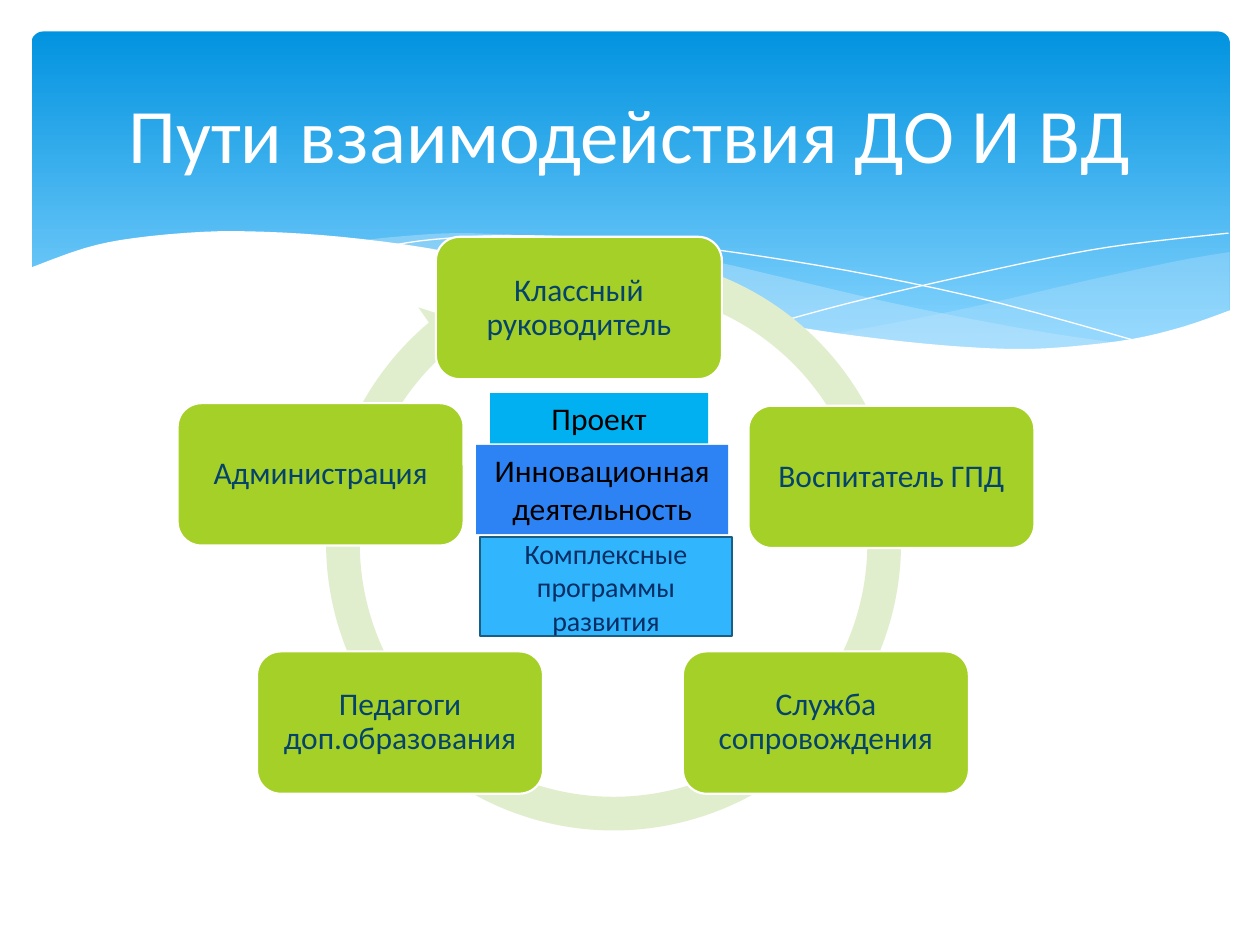
"""Build the slide on how extra classes and after-school work interact."""
from lxml.etree import SubElement
from pptx import Presentation
from pptx.dml.color import RGBColor as RGB
from pptx.enum.shapes import MSO_SHAPE as Kind
from pptx.enum.text import MSO_ANCHOR as Anchor, PP_ALIGN as Align
from pptx.oxml.ns import qn
from pptx.util import Inches, Pt

WHITE = RGB(0xFF, 0xFF, 0xFF)
BLACK = RGB(0, 0, 0)
SKY = RGB(0x02, 0x93, 0xE0)
PALE = RGB(0x83, 0xD3, 0xFE)
MIST = RGB(0xC6, 0xE7, 0xFC)
RING = RGB(0xE1, 0xEE, 0xCD)
LIME = RGB(0xA5, 0xD0, 0x28)
NAVY = RGB(0x06, 0x43, 0x6B)
CYAN = RGB(0x00, 0xB0, 0xF0)
BLUE = RGB(0x2D, 0x83, 0xF4)
AZURE = RGB(0x31, 0xB6, 0xFD)
EDGE = RGB(0x19, 0x5F, 0x84)
INK = RGB(0x05, 0x2E, 0x65)

TITLE = "Пути взаимодействия ДО И ВД"
NODES = [
    ("Классный руководитель", 3.46, 1.88),
    ("Администрация", 1.41, 3.2),
    ("Воспитатель ГПД", 5.94, 3.22),
    ("Служба сопровождения", 5.42, 5.17),
    ("Педагоги доп.образования", 2.04, 5.17),
]
NODE = (2.27, 1.13)
CORE = [
    ("Проект", (3.89, 3.12, 1.73, 0.4), CYAN, None, BLACK, 18, Anchor.TOP),
    ("Инновационная\nдеятельность", (3.78, 3.53, 2, 0.71), BLUE, None, BLACK, 18, Anchor.TOP),
    ("Комплексные программы развития", (3.81, 4.26, 2, 0.79), AZURE, EDGE, INK, 16, Anchor.MIDDLE),
]
FILLS = [
    (MIST, 29, [
        [(9.76, 2), (9.35, 2.07), (8.61, 2.23), (7.79, 2.42), (7.06, 2.57), (6.61, 2.65)],
        [(6.61, 2.65), (7.05, 2.71), (7.57, 2.76), (8.14, 2.78), (8.63, 2.75),
         (9.05, 2.69), (9.42, 2.59), (9.76, 2.47)],
    ]),
    (MIST, 40, [
        [(8.93, 2.73), (8.37, 2.65), (7.75, 2.54), (7.06, 2.4), (6.29, 2.22), (5.69, 2.08),
         (5.14, 1.98), (4.65, 1.91), (4.2, 1.87), (3.61, 1.85), (3.13, 1.88), (2.86, 1.91)],
        [(2.86, 1.91), (3.42, 1.99), (4.04, 2.11), (4.91, 2.32), (5.66, 2.48), (6.34, 2.61),
         (6.95, 2.7), (7.48, 2.76), (7.96, 2.78), (8.48, 2.77), (8.93, 2.73)],
    ]),
    (WHITE, 100, [
        [(9.77, 2.46), (9.4, 2.59), (8.99, 2.69), (8.5, 2.75), (8.09, 2.77), (7.61, 2.75),
         (7.08, 2.7), (6.48, 2.62), (5.79, 2.5), (5.03, 2.33), (4.18, 2.13), (3.4, 1.97),
         (2.71, 1.88), (2.11, 1.84), (1.61, 1.84), (1.06, 1.89), (0.67, 1.97), (0.23, 2.13)],
        [(0.23, 3.29), (9.77, 3.29)],
    ]),
]
LINES = [
    [(3.09, 1.95), (3.44, 1.9), (4.01, 1.87), (4.69, 1.89), (5.33, 1.94), (6.08, 2.04),
     (6.95, 2.19), (7.95, 2.41), (9.07, 2.72)],
    [(6.13, 2.57), (6.72, 2.41), (7.48, 2.23), (8.36, 2.04), (8.95, 1.94), (9.75, 1.85)],
]


def bend(pts, steps=4):
    if len(pts) < 3:
        return pts
    ext = [pts[0], *pts, pts[-1]]
    out = [pts[0]]
    for a, b, c, d in zip(ext, ext[1:], ext[2:], ext[3:]):
        for n in range(1, steps + 1):
            t = n / steps
            out.append(tuple(
                (2 * q + (r - p) * t + (2 * p - 5 * q + 4 * r - s) * t ** 2
                 + (3 * q - p - 3 * r + s) * t ** 3) / 2
                for p, q, r, s in zip(a, b, c, d)))
    return out


def paint(shape, fill=None, line=None, width=1.25):
    shape.shadow.inherit = False
    if fill is None:
        shape.fill.background()
    else:
        shape.fill.solid()
        shape.fill.fore_color.rgb = fill
    if line is None:
        shape.line.fill.background()
    else:
        shape.line.color.rgb = line
        shape.line.width = Pt(width)


def trace(shapes, pts, closed):
    emu = [(Inches(x), Inches(y)) for x, y in pts]
    pen = shapes.build_freeform(*emu[0])
    pen.add_line_segments(emu[1:], close=closed)
    return pen.convert_to_shape()


def write(shape, text, size, color, anchor=Anchor.MIDDLE, space=1, pad=None):
    frame = shape.text_frame
    frame.text = text
    frame.word_wrap = True
    frame.vertical_anchor = anchor
    if pad is not None:
        frame.margin_left = frame.margin_right = Inches(pad)
        frame.margin_top = frame.margin_bottom = Inches(pad)
    for para in frame.paragraphs:
        para.alignment = Align.CENTER
        para.line_spacing = space
        for run in para.runs:
            run.font.name = "Calibri"
            run.font.size = Pt(size)
            run.font.color.rgb = color


def place(shapes, kind, box):
    return shapes.add_shape(kind, *map(Inches, box))


def waves(shapes):
    sky = place(shapes, Kind.ROUNDED_RECTANGLE, (0.25, 0.25, 9.51, 2.7))
    sky.adjustments[0] = 0.034
    paint(sky)
    sky.fill.gradient()
    sky.fill.gradient_angle = 270
    for stop, pos, color in zip(sky.fill.gradient_stops, (0, 0.9), (SKY, PALE)):
        stop.position = pos
        stop.color.rgb = color
    mist, white = FILLS[:2], FILLS[2:]
    for group, strokes in ((mist, LINES), (white, [])):
        for color, alpha, edges in group:
            wave = trace(shapes, [p for edge in edges for p in bend(edge)], True)
            paint(wave, color)
            tint = next(wave.element.spPr.iter(qn("a:srgbClr")))
            SubElement(tint, qn("a:alpha"), val=str(alpha * 1000))
        for pts in strokes:
            paint(trace(shapes, bend(pts), False), None, WHITE, 0)


def cycle(shapes):
    ring = place(shapes, Kind.CIRCULAR_ARROW, (2.44, 1.88, 4.86, 4.86))
    for n, val in enumerate((0.055, 3.307, 137.833, 173.815, 0.058)):
        ring.adjustments[n] = val
    paint(ring, RING)
    for text, left, top in NODES:
        node = place(shapes, Kind.ROUNDED_RECTANGLE, (left, top, *NODE))
        paint(node, LIME, WHITE)
        write(node, text, 18, NAVY, space=0.9, pad=0.12)


def main():
    deck = Presentation()
    deck.slide_width, deck.slide_height = Inches(10), Inches(7.5)
    shapes = deck.slides.add_slide(deck.slide_layouts[6]).shapes
    waves(shapes)
    title = shapes.add_textbox(*map(Inches, (0.5, 0.37, 9, 1.37)))
    write(title, TITLE, 44, WHITE)
    cycle(shapes)
    for text, box, fill, line, color, size, anchor in CORE:
        card = place(shapes, Kind.RECTANGLE, box)
        paint(card, fill, line)
        write(card, text, size, color, anchor)
    deck.save("out.pptx")


if __name__ == "__main__":
    main()
